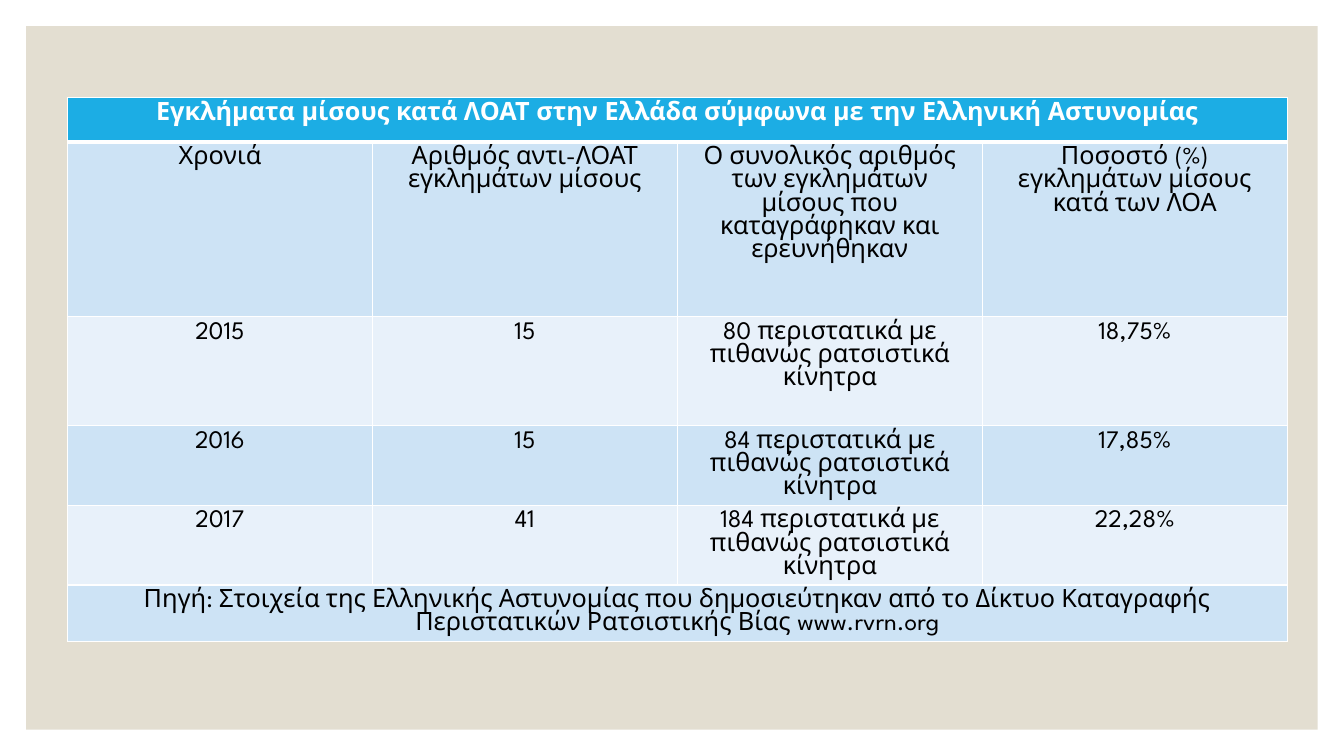
import pptx
import pptx.dml.color
import pptx.enum.shapes
import pptx.enum.text
import pptx.oxml
import pptx.oxml.ns
import pptx.util
from dataclasses import dataclass

Cm = pptx.util.Cm
Pt = pptx.util.Pt

# Content
HEADING = "Εγκλήματα μίσους κατά ΛΟΑΤ στην Ελλάδα σύμφωνα με την Ελληνική Αστυνομίας"
COLUMN_LABELS = (
    "Χρονιά",
    "Αριθμός αντι-ΛΟΑΤ εγκλημάτων μίσους",
    "Ο συνολικός αριθμός των εγκλημάτων μίσους που καταγράφηκαν και ερευνήθηκαν",
    "Ποσοστό (%) εγκλημάτων μίσους κατά των ΛΟΑ",
)
YEARS = [
    ("2015", "15", "80 περιστατικά με πιθανώς ρατσιστικά κίνητρα", "18,75%"),
    ("2016", "15", "84 περιστατικά με πιθανώς ρατσιστικά κίνητρα", "17,85%"),
    ("2017", "41", "184 περιστατικά με πιθανώς ρατσιστικά κίνητρα", "22,28%"),
]
SOURCE = (
    "Πηγή: Στοιχεία της Ελληνικής Αστυνομίας που δημοσιεύτηκαν από το "
    "Δίκτυο Καταγραφής Περιστατικών Ρατσιστικής Βίας www.rvrn.org"
)
ROWS = [(HEADING,), COLUMN_LABELS, *YEARS, (SOURCE,)]


@dataclass(frozen=True)
class Theme:
    font: str = "League Spartan"
    size: int = 18
    panel: str = "E3DED1"
    header: str = "1CADE4"
    bands: tuple = ("E8F1FA", "CDE3F5")
    header_text: str = "FFFFFF"
    body_text: str = "000000"
    border: str = "FFFFFF"
    thin: float = 1
    thick: float = 3


THEME = Theme()

# Layout, in cm
SLIDE_WIDTH, SLIDE_HEIGHT = 33.87, 19.05
MARGIN = 0.66
TABLE_LEFT, TABLE_TOP, TABLE_WIDTH = 1.7, 2.46, 30.74
MIN_ROW = 1.12  # rows grow to hold their text
ROW_HEIGHTS = [MIN_ROW, 4.4, 2.74, MIN_ROW, MIN_ROW, MIN_ROW]


def rgb(value):
    return pptx.dml.color.RGBColor.from_string(value)


def set_borders(cell, row):
    """Put white lines on all sides, thick between heading and body."""
    widths = {
        "lnL": THEME.thin,
        "lnR": THEME.thin,
        "lnT": THEME.thick if row == 1 else THEME.thin,
        "lnB": THEME.thick if row == 0 else THEME.thin,
    }
    properties = cell._tc.get_or_add_tcPr()
    for position, (side, width) in enumerate(widths.items()):
        line = pptx.oxml.parse_xml(
            f'<a:{side} {pptx.oxml.ns.nsdecls("a")} w="{Pt(width)}"><a:solidFill>'
            f'<a:srgbClr val="{THEME.border}"/></a:solidFill></a:{side}>'
        )
        properties.insert(position, line)


def write(cell, text, heading):
    paragraph = cell.text_frame.paragraphs[0]
    paragraph.alignment = pptx.enum.text.PP_ALIGN.CENTER
    run = paragraph.add_run()
    run.text = text
    run.font.name = THEME.font
    run.font.size = Pt(THEME.size)
    run.font.bold = heading
    run.font.color.rgb = rgb(THEME.header_text if heading else THEME.body_text)


def add_panel(slide):
    panel = slide.shapes.add_shape(
        pptx.enum.shapes.MSO_SHAPE.RECTANGLE, Cm(MARGIN), Cm(MARGIN),
        Cm(SLIDE_WIDTH - 2 * MARGIN), Cm(SLIDE_HEIGHT - 2 * MARGIN))
    panel.shadow.inherit = False
    panel.fill.solid()
    panel.fill.fore_color.rgb = rgb(THEME.panel)
    panel.line.fill.background()


def add_crime_table(slide):
    columns = len(COLUMN_LABELS)
    crimes = slide.shapes.add_table(
        len(ROWS), columns, Cm(TABLE_LEFT), Cm(TABLE_TOP),
        Cm(TABLE_WIDTH), Cm(sum(ROW_HEIGHTS))).table
    for column in crimes.columns:
        column.width = Cm(TABLE_WIDTH / columns)

    for row, texts in enumerate(ROWS):
        crimes.rows[row].height = Cm(ROW_HEIGHTS[row])
        fill = THEME.header if row == 0 else THEME.bands[row % 2]
        # The last row repeats the darker band
        if row == len(ROWS) - 1:
            fill = THEME.bands[1]
        for column in range(columns):
            cell = crimes.cell(row, column)
            cell.fill.solid()
            cell.fill.fore_color.rgb = rgb(fill)
            set_borders(cell, row)
        if len(texts) == 1:
            crimes.cell(row, 0).merge(crimes.cell(row, columns - 1))
        for column, text in enumerate(texts):
            write(crimes.cell(row, column), text, heading=row == 0)


def main():
    deck = pptx.Presentation()
    deck.slide_width, deck.slide_height = Cm(SLIDE_WIDTH), Cm(SLIDE_HEIGHT)
    slide = deck.slides.add_slide(deck.slide_layouts[6])
    add_panel(slide)
    add_crime_table(slide)
    deck.save("out.pptx")


if __name__ == "__main__":
    main()
